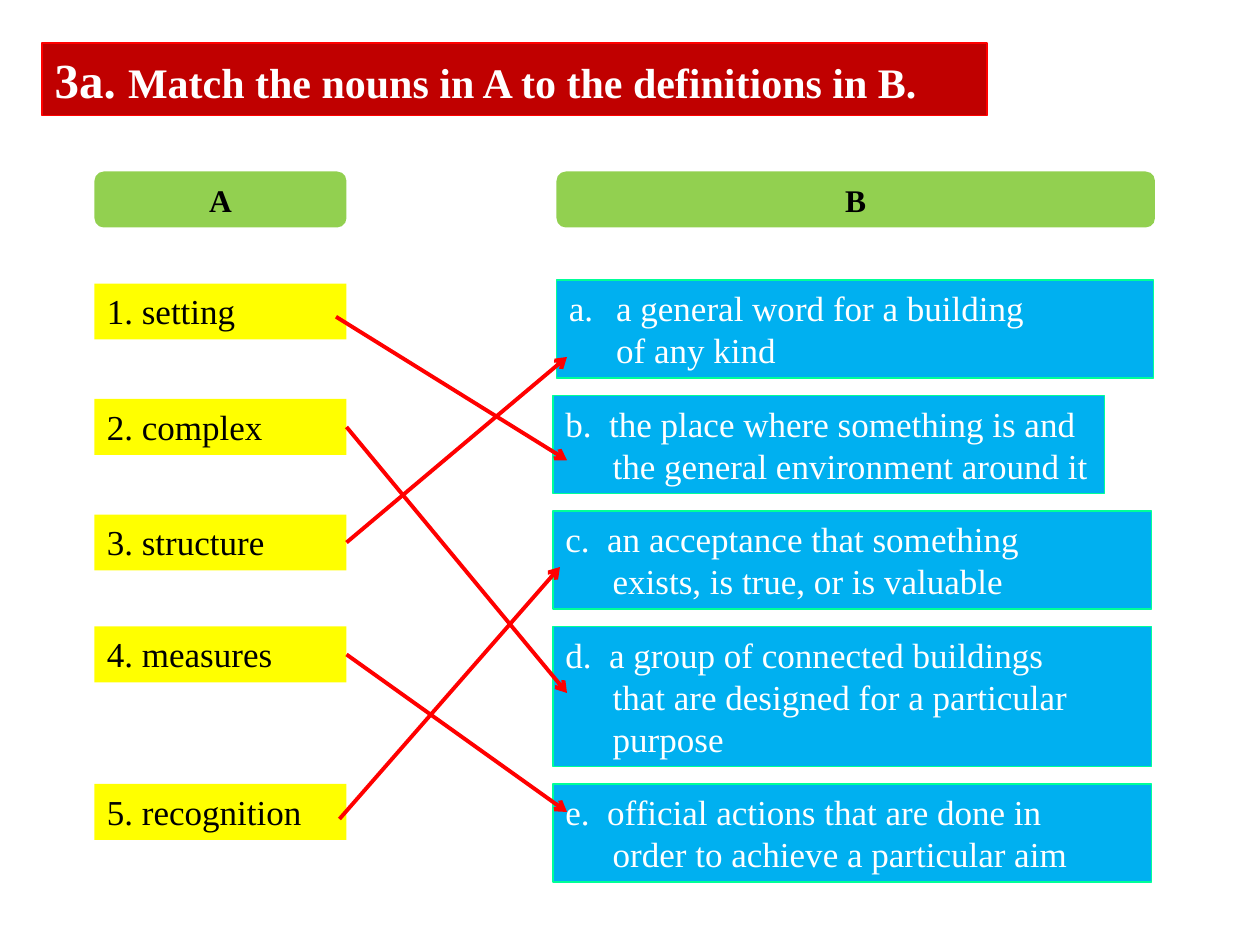
from dataclasses import dataclass

from lxml import etree
from pptx import Presentation
from pptx.dml.color import RGBColor
from pptx.enum import shapes, text
from pptx.oxml.ns import qn
from pptx.util import Pt


@dataclass(frozen=True)
class Theme:
    font: str = "Times New Roman"
    banner: str = "C00000"
    red: str = "FF0000"
    header: str = "92D050"
    noun: str = "FFFF00"
    definition: str = "00B0F0"
    edge: str = "00FF99"
    black: str = "000000"
    white: str = "FFFFFF"
    number_size: int = 28
    title_size: int = 24
    header_size: int = 18
    body_size: int = 20


T = Theme()
RECT = shapes.MSO_SHAPE.RECTANGLE
ROUNDED = shapes.MSO_SHAPE.FLOWCHART_ALTERNATE_PROCESS


def style(sp, fill, edge, size, color, bold=False):
    """Fill and outline a shape, set its font, return its paragraph."""
    sp.fill.solid()
    sp.fill.fore_color.rgb = RGBColor.from_string(fill)
    if edge:
        sp.line.color.rgb = RGBColor.from_string(edge)
        sp.line.width = Pt(0.75)
    else:
        sp.line.fill.background()
    p = sp.text_frame.paragraphs[0]
    p.alignment = text.PP_ALIGN.LEFT
    p.font.name, p.font.size, p.font.bold = T.font, Pt(size), bold
    p.font.color.rgb = RGBColor.from_string(color)
    return p


def add_box(kind, left, top, width, height, words, *look):
    sp = s.shapes.add_shape(kind, Pt(left), Pt(top), Pt(width), Pt(height))
    sp.shadow.inherit = False
    sp.text_frame.word_wrap = True
    p = style(sp, *look)
    p.text = words
    return sp, p


prs = Presentation()
prs.slide_width, prs.slide_height = Pt(720), Pt(540)
s = prs.slides.add_slide(prs.slide_layouts[5])

# Title banner
title = s.shapes.title
title.left, title.top, title.width, title.height = Pt(24), Pt(24.5), Pt(540), Pt(41.5)
tf = title.text_frame
tf.auto_size = text.MSO_AUTO_SIZE.NONE
tf.vertical_anchor = text.MSO_ANCHOR.TOP
p = style(title, T.banner, T.red, T.title_size, T.white, True)
for words, size in (("3a. ", T.number_size),
                    ("Match the nouns in A to the definitions in B.", T.title_size)):
    r = p.add_run()
    r.text = words
    r.font.size = Pt(size)

# Column headers
for words, left, width in (("A", 54, 144), ("B", 318, 342)):
    sp, p = add_box(ROUNDED, left, 98, width, 32, words,
                    T.header, None, T.header_size, T.black, True)
    p.alignment = text.PP_ALIGN.CENTER

# Column A: nouns
nouns = (("setting", 162), ("complex", 228), ("structure", 294),
         ("measures", 358), ("recognition", 448))
for number, (noun, top) in enumerate(nouns, 1):
    sp, p = add_box(RECT, 54, top, 144, 32, f"{number}. {noun}",
                    T.noun, None, T.body_size, T.black)
    sp.text_frame.vertical_anchor = text.MSO_ANCHOR.TOP

# Column B: definitions with a hanging indent
definitions = (
    ("a general word for a building\nof any kind", 318, 160, 341, 56),
    ("b.  the place where something is and\nthe general environment around it",
     316, 226, 315, 56),
    ("c.  an acceptance that something\nexists, is true, or is valuable",
     316, 292, 342, 56),
    ("d.  a group of connected buildings\nthat are designed for a particular\npurpose",
     316, 358, 342, 80),
    ("e.  official actions that are done in\norder to achieve a particular aim",
     316, 448, 342, 56),
)
for i, (words, *place) in enumerate(definitions):
    sp, p = add_box(RECT, *place, words, T.definition, T.edge, T.body_size, T.white)
    sp.text_frame.vertical_anchor = text.MSO_ANCHOR.MIDDLE
    pPr = p._p.get_or_add_pPr()
    pPr.set("marL", str(Pt(27)))
    pPr.set("indent", str(-Pt(27)))
    if i == 0:  # the first letter is an automatic number
        bullet = etree.Element(qn("a:buAutoNum"), type="alphaLcPeriod")
        pPr.insert(0, bullet)
    if i == 1:
        sp.text_frame.word_wrap = False

# Answer arrows
arrows = ((192, 181, 324, 263), (198, 310, 324, 204), (198, 244, 324, 396),
          (198, 374, 324, 464), (194, 468, 320, 324))
for ends in arrows:
    arrow = s.shapes.add_connector(shapes.MSO_CONNECTOR.STRAIGHT, *map(Pt, ends))
    arrow.line.color.rgb = RGBColor.from_string(T.red)
    arrow.line.width = Pt(2.25)
    etree.SubElement(arrow.line._get_or_add_ln(), qn("a:tailEnd"), type="arrow")
    etree.SubElement(arrow._element.spPr, qn("a:effectLst"))

prs.save("out.pptx")
